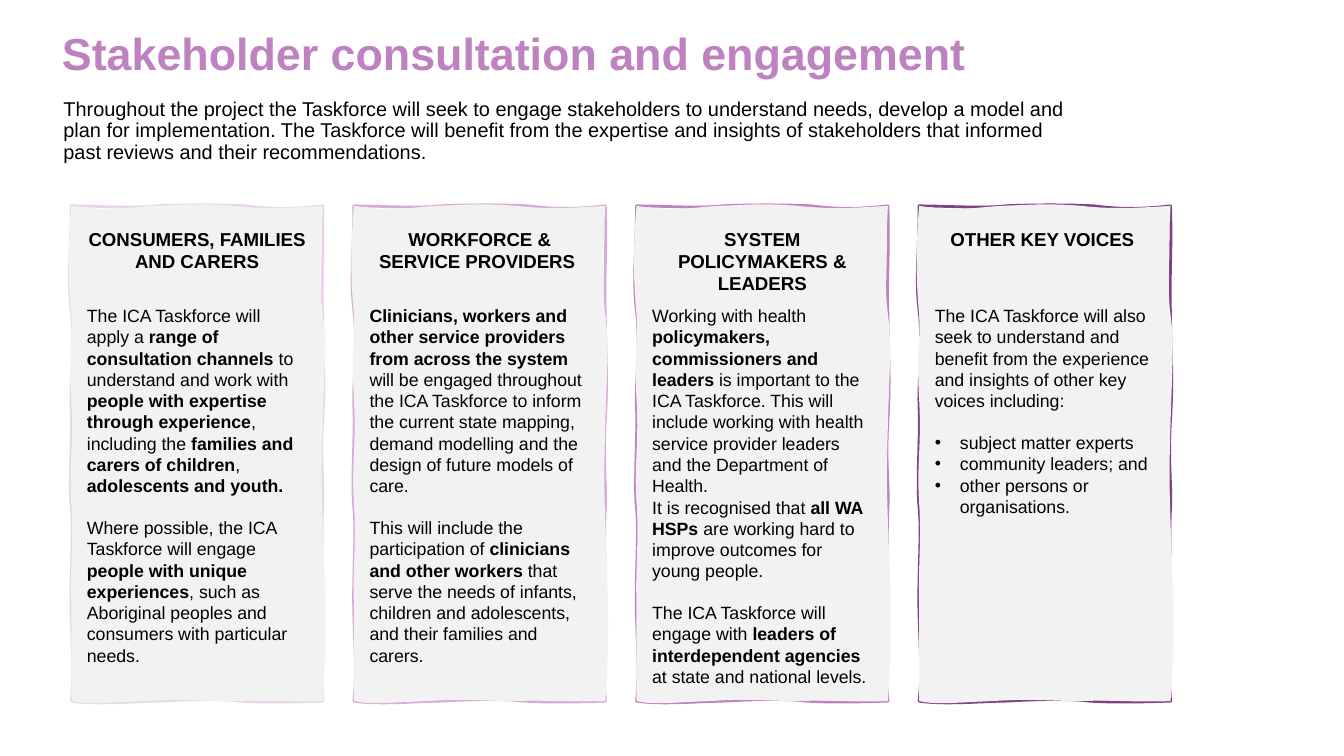
from lxml import etree
from pptx import Presentation
from pptx.dml.color import RGBColor
from pptx.enum.text import MSO_ANCHOR, MSO_AUTO_SIZE, PP_ALIGN
from pptx.oxml.ns import qn
from pptx.util import Pt

LEFT, CENTER = PP_ALIGN.LEFT, PP_ALIGN.CENTER
TOP, MIDDLE = MSO_ANCHOR.TOP, MSO_ANCHOR.MIDDLE
NO_AUTOFIT = MSO_AUTO_SIZE.NONE

BLACK = RGBColor(0x00, 0x00, 0x00)
PURPLE = RGBColor(0xBE, 0x82, 0xC0)
PALE_GREY = RGBColor(0xF2, 0xF2, 0xF2)
PALE_LILAC = RGBColor(0xE9, 0xD5, 0xEA)
LILAC = RGBColor(0xD4, 0xAC, 0xD5)
PLUM = RGBColor(0x81, 0x42, 0x83)

FONT = "Arial"
CARD_LEFT, CARD_TOP, CARD_STEP = 38.2, 110.3, 151.4
CARD_WIDTH, CARD_HEIGHT = 134.7, 265.3
BODY_TOP, BODY_WIDTH, BODY_HEIGHT = 159.8, 131.8, 214.6
BLANK_LINE = 11
BULLET_INDENT = 13.5

GRID_WIDTH, GRID_HEIGHT = 187, 369
SKETCHED_BORDER = [
    (19, 0, 47, 2, 64, 0), (81, -1, 114, -1, 130, 0), (146, 2, 160, 3, 187, 0),
    (188, 38, 186, 54, 187, 81), (187, 109, 189, 125, 187, 159),
    (185, 192, 188, 209, 187, 225), (186, 241, 187, 269, 187, 295),
    (186, 321, 185, 337, 187, 369), (160, 370, 141, 370, 126, 369),
    (112, 367, 82, 368, 66, 369), (50, 369, 18, 372, 0, 369),
    (2, 352, 1, 336, 0, 306), (-1, 276, 2, 244, 0, 225),
    (-2, 206, 1, 169, 0, 151), (-1, 134, 3, 102, 0, 78), (-3, 53, 0, 34, 0, 0),
]
SKETCHED_FILL = [
    (27, 4, 35, 2, 60, 0), (86, -1, 96, -2, 121, 0), (146, 3, 169, 1, 187, 0),
    (186, 19, 184, 59, 187, 81), (190, 104, 188, 126, 187, 162),
    (186, 199, 186, 204, 187, 236), (188, 268, 191, 316, 187, 369),
    (157, 370, 145, 368, 121, 369), (97, 369, 83, 367, 55, 369),
    (27, 370, 14, 372, 0, 369), (0, 341, 0, 320, 0, 295),
    (-1, 270, 2, 251, 0, 221), (-2, 192, 2, 179, 0, 144),
    (-2, 109, 1, 104, 0, 81), (-2, 59, -3, 37, 0, 0),
]

# Each paragraph: kind, text with *bold* parts
CARDS = [
    (PALE_LILAC, "CONSUMERS, FAMILIES AND CARERS", [
        ("plain", "The ICA Taskforce will apply a *range of consultation channels *to "
                  "understand and work with *people with expertise through experience*, "
                  "including the *families and carers of children*, *adolescents and youth.*"),
        ("spaced", "Where possible, the ICA Taskforce will engage *people with unique "
                   "experiences*, such as Aboriginal peoples and consumers with particular needs."),
    ]),
    (LILAC, "WORKFORCE & SERVICE PROVIDERS ", [
        ("plain", "*Clinicians, workers and other service providers from across the system *"
                  "will be engaged throughout the ICA Taskforce to inform the current state "
                  "mapping, demand modelling and the design of future models of care."),
        ("spaced", "This will include the participation of *clinicians and other workers *that "
                   "serve the needs of infants, children and adolescents, and their families "
                   "and carers."),
    ]),
    (PURPLE, "SYSTEM POLICYMAKERS & LEADERS", [
        ("plain", "Working with health *policymakers, commissioners and leaders *is important "
                  "to the ICA Taskforce. This will include working with health service "
                  "provider leaders and the Department of Health."),
        ("plain", "It is recognised that *all WA HSPs *are working hard to improve outcomes "
                  "for young people."),
        ("spaced", "The ICA Taskforce will engage with *leaders of interdependent agencies *at "
                   "state and national levels."),
    ]),
    (PLUM, "OTHER KEY VOICES ", [
        ("plain", "The ICA Taskforce will also seek to understand and benefit from the "
                  "experience and insights of other key voices including:"),
        ("spaced bullet", "subject matter experts"),
        ("bullet", "community leaders; and"),
        ("bullet", "other persons or organisations."),
    ]),
]


def add_runs(paragraph, marked_text, size, color=BLACK):
    for index, part in enumerate(marked_text.split("*")):
        if part:
            run = paragraph.add_run()
            run.text = part
            run.font.name = FONT
            run.font.size = Pt(size)
            run.font.bold = index % 2 == 1
            run.font.color.rgb = color


def set_frame(frame, anchor, insets):
    frame.word_wrap = True
    frame.auto_size = NO_AUTOFIT
    frame.vertical_anchor = anchor
    frame.margin_left = frame.margin_right = Pt(insets[0])
    frame.margin_top, frame.margin_bottom = Pt(insets[1]), Pt(insets[2])
    return frame.paragraphs[0]


prs = Presentation()
prs.slide_width, prs.slide_height = Pt(720), Pt(405)
slide = prs.slides.add_slide(prs.slide_layouts[5])

title = slide.shapes.title
title.left, title.top, title.width, title.height = Pt(28.2), Pt(15), Pt(504.7), Pt(29.5)
heading = set_frame(title.text_frame, MIDDLE, (5, 2.6, 2.6))
heading.alignment = LEFT
heading.line_spacing = 0.9
add_runs(heading, "*Stakeholder consultation and engagement*", 24, PURPLE)

intro = slide.shapes.add_textbox(Pt(29), Pt(50.4), Pt(550), Pt(44.6))
summary = set_frame(intro.text_frame, TOP, (5, 2.6, 2.6))
summary.line_spacing = 0.9
add_runs(summary, "Throughout the project the Taskforce will seek to engage stakeholders to "
         "understand needs, develop a model and plan for implementation. The Taskforce will "
         "benefit from the expertise and insights of stakeholders that informed past reviews "
         "and their recommendations.", 10.7)

for column, (border_color, voice, paragraphs) in enumerate(CARDS):
    left = CARD_LEFT + column * CARD_STEP
    right, bottom = left + CARD_WIDTH, CARD_TOP + CARD_HEIGHT
    builder = slide.shapes.build_freeform(Pt(left), Pt(CARD_TOP))
    builder.add_line_segments([(Pt(right), Pt(CARD_TOP)), (Pt(right), Pt(bottom)),
                               (Pt(left), Pt(bottom))])
    card = builder.convert_to_shape()
    outlines = card._element.spPr.find(".//" + qn("a:pathLst"))
    outlines.remove(outlines[0])
    for curves, option, value in ((SKETCHED_BORDER, "fill", "none"),
                                  (SKETCHED_FILL, "stroke", "0")):
        outline = etree.SubElement(outlines, qn("a:path"), w=str(GRID_WIDTH), h=str(GRID_HEIGHT))
        outline.set(option, value)
        start = etree.SubElement(outline, qn("a:moveTo"))
        etree.SubElement(start, qn("a:pt"), x="0", y="0")
        for curve in curves:
            bend = etree.SubElement(outline, qn("a:cubicBezTo"))
            for x, y in zip(curve[::2], curve[1::2]):
                etree.SubElement(bend, qn("a:pt"), x=str(x), y=str(y))
        etree.SubElement(outline, qn("a:close"))
    card.shadow.inherit = False
    card.fill.solid()
    card.fill.fore_color.rgb = PALE_GREY
    card.line.color.rgb = border_color
    card.line.width = Pt(1.5)
    card_heading = set_frame(card.text_frame, TOP, (7.2, 11.5, 3.6))
    card_heading.alignment = CENTER
    add_runs(card_heading, f"*{voice}*", 10)

for column, (border_color, voice, paragraphs) in enumerate(CARDS):
    details = slide.shapes.add_textbox(Pt(CARD_LEFT + 1.3 + column * CARD_STEP), Pt(BODY_TOP),
                                       Pt(BODY_WIDTH), Pt(BODY_HEIGHT))
    paragraph = set_frame(details.text_frame, TOP, (7.2, 3.6, 3.6))
    for index, (kind, marked_text) in enumerate(paragraphs):
        if index:
            paragraph = details.text_frame.add_paragraph()
        if "spaced" in kind:
            paragraph.space_before = Pt(BLANK_LINE)
        if "bullet" in kind:
            properties = paragraph._p.get_or_add_pPr()
            properties.set("marL", str(Pt(BULLET_INDENT)))
            properties.set("indent", str(-Pt(BULLET_INDENT)))
            etree.SubElement(properties, qn("a:buFont"), typeface=FONT)
            etree.SubElement(properties, qn("a:buChar"), char="•")
        add_runs(paragraph, marked_text, 9.5)

prs.save("out.pptx")
